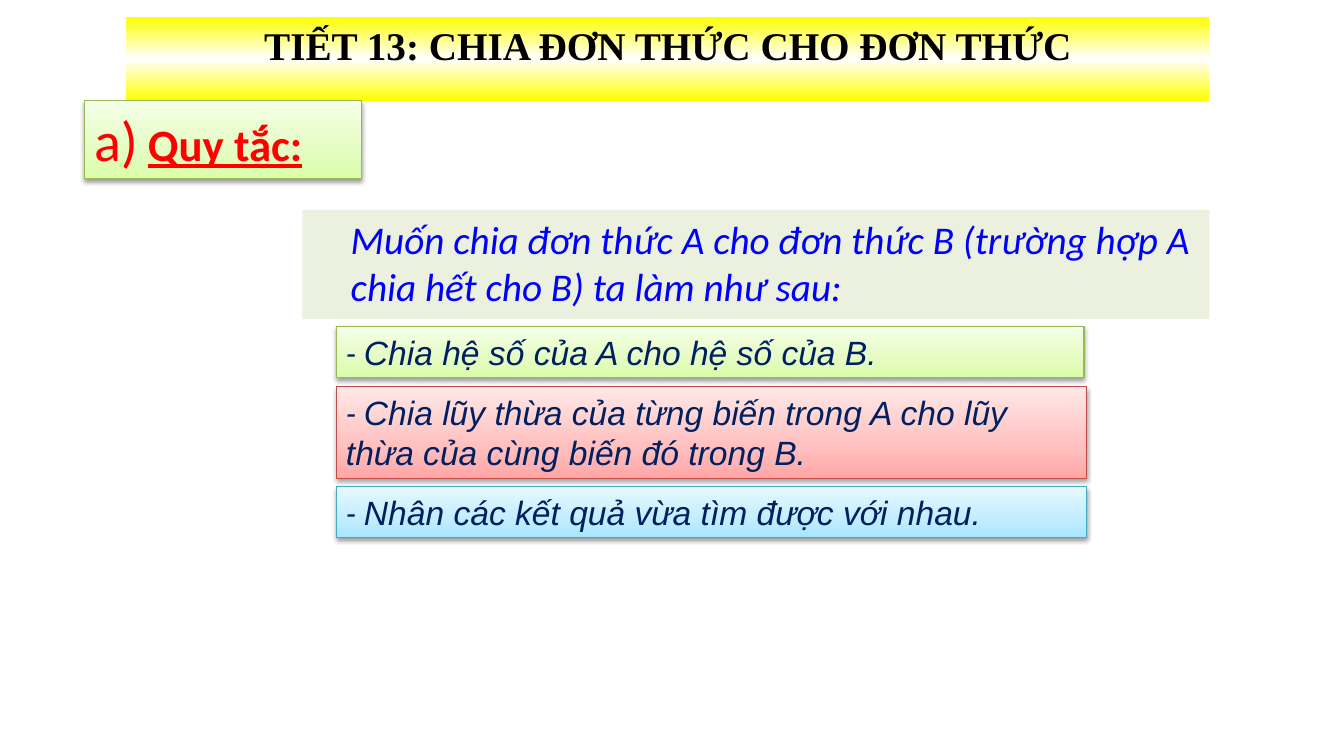
from lxml import etree
from pptx import Presentation
from pptx.dml.color import RGBColor
from pptx.enum.shapes import MSO_SHAPE
from pptx.enum.text import MSO_ANCHOR, MSO_AUTO_SIZE, PP_ALIGN
from pptx.oxml.ns import qn
from pptx.util import Cm, Pt

RECTANGLE = MSO_SHAPE.RECTANGLE
TOP = MSO_ANCHOR.TOP
GROW = MSO_AUTO_SIZE.SHAPE_TO_FIT_TEXT
FIXED = MSO_AUTO_SIZE.NONE
LEFT, CENTER = PP_ALIGN.LEFT, PP_ALIGN.CENTER

RED, BLUE, NAVY, BLACK = "FF0000", "0000FF", "002060", "000000"
YELLOW_BAND = [(0, "FFFF00"), (50, "FFFFFF"), (100, "FFFF00")]
# Each card style: gradient stops from bottom to top, then the outline
GREEN_CARD = ([(0, "DAFDA7"), (35, "E4FCC2"), (100, "F5FFE7")], "98B955")
RED_CARD = ([(0, "FFA6A5"), (35, "FFC0BF"), (100, "FFE7E7")], "BF4C48")
CYAN_CARD = ([(0, "A7E6FF"), (35, "C1EDFF"), (100, "E7F8FF")], "46AAC5")


def color(value):
    return RGBColor.from_string(value)


def add_color(parent, value):
    return etree.SubElement(parent, qn("a:srgbClr"), val=value)


class LessonSlide:
    body_font = "Calibri"
    rule_font = "Arial"
    title_font = "Times New Roman"

    def __init__(self, presentation):
        self.slide = presentation.slides.add_slide(presentation.slide_layouts[5])

    def style_font(self, font, name, size, value, bold=False, italic=False):
        font.name, font.size = name, Pt(size)
        font.color.rgb = color(value)
        font.bold, font.italic = bold, italic

    def fill_gradient(self, shape, stops):
        shape.fill.gradient()
        shape.fill.gradient_angle = 90
        stop_list = shape._element.spPr.find(qn("a:gradFill")).find(qn("a:gsLst"))
        for old_stop in list(stop_list):
            stop_list.remove(old_stop)
        for position, value in stops:
            stop = etree.SubElement(stop_list, qn("a:gs"), pos=str(position * 1000))
            add_color(stop, value)

    def add_shadow(self, shape):
        effects = shape._element.spPr.find(qn("a:effectLst"))
        shadow = etree.SubElement(effects, qn("a:outerShdw"), blurRad="40000",
                                  dist="20000", dir="5400000", rotWithShape="0")
        etree.SubElement(add_color(shadow, BLACK), qn("a:alpha"), val="38000")

    def prepare_text(self, shape, auto_size, alignment=LEFT):
        frame = shape.text_frame
        frame.word_wrap = True
        frame.auto_size = auto_size
        frame.vertical_anchor = TOP
        paragraph = frame.paragraphs[0]
        paragraph.alignment = alignment
        return paragraph

    def box(self, left, top, width, height):
        shape = self.slide.shapes.add_shape(
            RECTANGLE, Cm(left), Cm(top), Cm(width), Cm(height))
        shape.shadow.inherit = False
        return shape

    def title(self, text, left, top, width, height):
        shape = self.slide.shapes.title
        shape.left, shape.top = Cm(left), Cm(top)
        shape.width, shape.height = Cm(width), Cm(height)
        self.fill_gradient(shape, YELLOW_BAND)
        paragraph = self.prepare_text(shape, GROW, CENTER)
        paragraph.text = text
        self.style_font(paragraph.font, self.title_font, 28, BLACK, bold=True)

    def card(self, style, left, top, width, height):
        stops, outline = style
        shape = self.box(left, top, width, height)
        self.fill_gradient(shape, stops)
        shape.line.color.rgb = color(outline)
        shape.line.width = Pt(0.75)
        self.add_shadow(shape)
        return self.prepare_text(shape, GROW)

    def heading(self, letter, text, *place):
        paragraph = self.card(GREEN_CARD, *place)
        for part, size, bold in ((letter, 40, False), (" ", 32, False), (text, 32, True)):
            run = paragraph.add_run()
            run.text = part
            self.style_font(run.font, self.body_font, size, RED, bold=bold)
            run.font.underline = bold

    def statement(self, text, *place):
        shape = self.box(*place)
        shape.fill.solid()
        shape.fill.fore_color.rgb = color("EBF1DE")
        shape.line.fill.background()
        shape.text_frame.margin_left = Cm(1.22)
        paragraph = self.prepare_text(shape, FIXED)
        paragraph.text = text
        self.style_font(paragraph.font, self.body_font, 28, BLUE, italic=True)

    def rule(self, text, style, *place):
        paragraph = self.card(style, *place)
        for part, font_name in (("- ", self.body_font), (text, self.rule_font)):
            run = paragraph.add_run()
            run.text = part
            self.style_font(run.font, font_name, 24, NAVY, italic=True)


def main():
    presentation = Presentation()
    presentation.slide_width, presentation.slide_height = Cm(33.87), Cm(19.05)
    lesson = LessonSlide(presentation)

    # Title and section heading
    lesson.title("TIẾT 13: CHIA ĐƠN THỨC CHO ĐƠN THỨC", 3.18, 0.42, 27.3, 1.45)
    lesson.heading("a)", "Quy tắc:", 2.12, 2.54, 6.99, 1.97)

    # Statement of the rule
    lesson.statement("Muốn chia đơn thức A cho đơn thức B (trường hợp A "
                     "chia hết cho B) ta làm như sau:", 7.62, 5.29, 22.86, 2.75)

    # Steps of the rule
    steps = (
        ("Chia hệ số của A cho hệ số của B.", GREEN_CARD, 8.23, 18.85, 1.28),
        ("Chia lũy thừa của từng biến trong A cho lũy thừa của cùng biến đó trong B.",
         RED_CARD, 9.75, 18.92, 2.31),
        ("Nhân các kết quả vừa tìm được với nhau.", CYAN_CARD, 12.27, 18.92, 1.28),
    )
    for text, style, top, width, height in steps:
        lesson.rule(text, style, 8.47, top, width, height)

    presentation.save("out.pptx")


if __name__ == "__main__":
    main()
